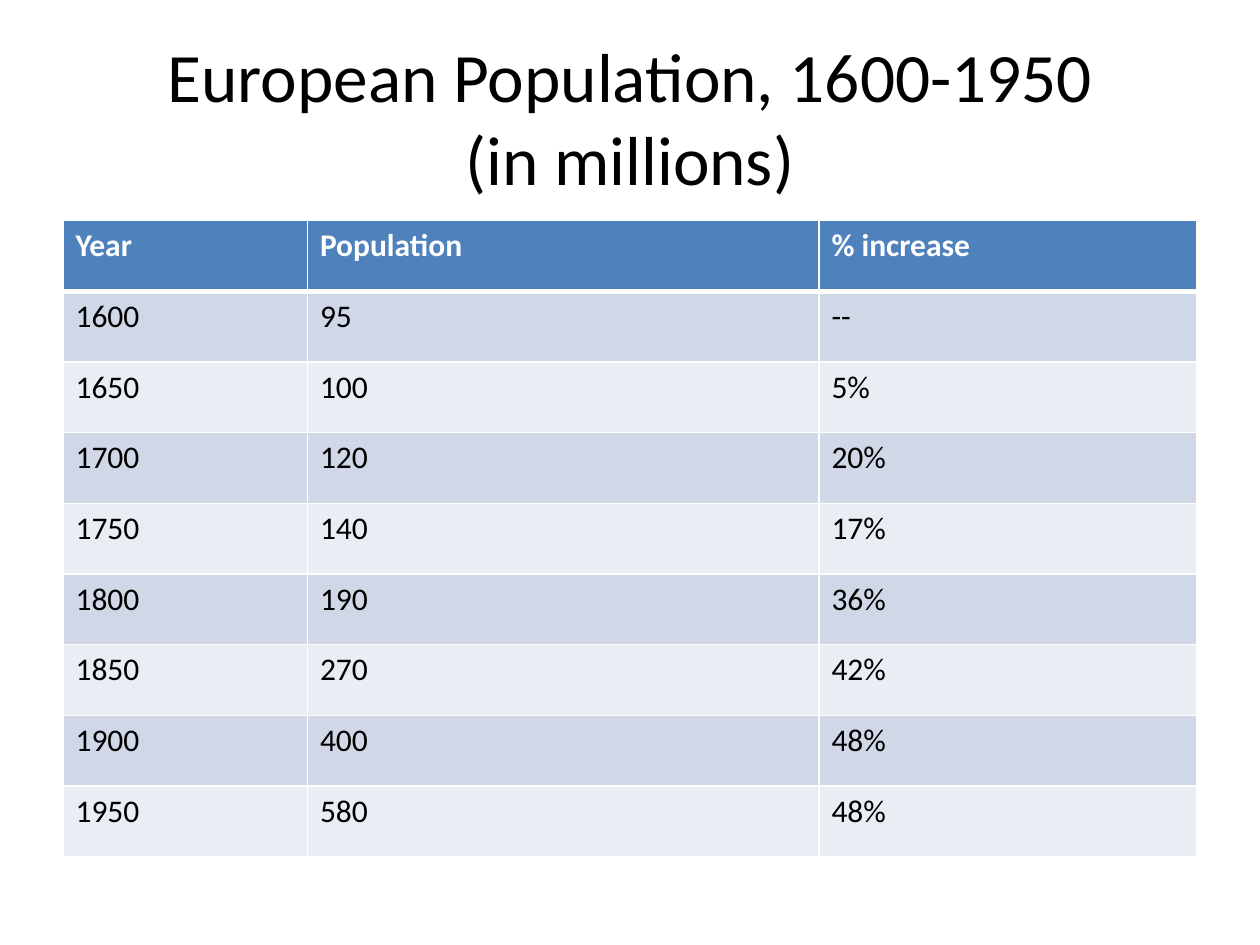
from lxml.etree import SubElement
from pptx import Presentation
from pptx.dml.color import RGBColor
from pptx.enum.text import MSO_ANCHOR, MSO_AUTO_SIZE, PP_ALIGN
from pptx.oxml.ns import qn
from pptx.util import Inches, Pt

WHITE = RGBColor(0xFF, 0xFF, 0xFF)
BLACK = RGBColor(0x00, 0x00, 0x00)
BLUE = RGBColor(0x4F, 0x81, 0xBD)
DARK = RGBColor(0xD0, 0xD8, 0xE8)
LIGHT = RGBColor(0xE9, 0xED, 0xF4)

TITLE = "European Population, 1600-1950\v(in millions)"
HEAD = ("Year", "Population", "% increase")
DATA = [
    ("1600", "95", "--"),
    ("1650", "100", "5%"),
    ("1700", "120", "20%"),
    ("1750", "140", "17%"),
    ("1800", "190", "36%"),
    ("1850", "270", "42%"),
    ("1900", "400", "48%"),
    ("1950", "580", "48%"),
]
WIDTHS = (1.94, 4.06, 3)
HEIGHT = 5.05


def style(item, values):
    for name, value in values.items():
        setattr(item, name, value)


def set_text(frame, text, size, color, bold=False):
    frame.text = text
    for run in frame.paragraphs[0].runs:
        style(run.font, {"name": "Calibri", "size": Pt(size), "bold": bold})
        run.font.color.rgb = color


def add_title(slide):
    title = slide.shapes.title
    style(title, {"left": Inches(0.5), "top": Inches(0.3),
                  "width": Inches(9), "height": Inches(1.25)})
    frame = title.text_frame
    style(frame, {"word_wrap": True, "auto_size": MSO_AUTO_SIZE.NONE,
                  "vertical_anchor": MSO_ANCHOR.MIDDLE})
    set_text(frame, TITLE, 39.6, BLACK)
    frame.paragraphs[0].alignment = PP_ALIGN.CENTER


def set_edges(cell, edges):
    props = cell._tc.get_or_add_tcPr()
    for tag, width in edges.items():
        line = SubElement(props, qn(f"a:{tag}"), w=str(Pt(width)))
        fill = SubElement(line, qn("a:solidFill"))
        SubElement(fill, qn("a:srgbClr"), val=str(WHITE))


def fill_cell(cell, text, row):
    header = row == 0
    # The rule under the header is heavier than the others
    set_edges(cell, {"lnL": 1, "lnR": 1,
                     "lnT": 3 if row == 1 else 1,
                     "lnB": 3 if header else 1})
    cell.fill.solid()
    cell.fill.fore_color.rgb = BLUE if header else DARK if row % 2 else LIGHT
    set_text(cell.text_frame, text, 18, WHITE if header else BLACK, header)


def add_grid(slide):
    rows = [HEAD, *DATA]
    table = slide.shapes.add_table(
        len(rows), len(HEAD), Inches(0.5), Inches(1.75),
        Inches(sum(WIDTHS)), Inches(HEIGHT)).table
    for column, width in zip(table.columns, WIDTHS):
        column.width = Inches(width)
    for row, texts in enumerate(rows):
        for col, text in enumerate(texts):
            fill_cell(table.cell(row, col), text, row)


def main():
    deck = Presentation()
    style(deck, {"slide_width": Inches(10), "slide_height": Inches(7.5)})
    slide = deck.slides.add_slide(deck.slide_layouts[5])
    # Heading above the population table
    add_title(slide)
    add_grid(slide)
    deck.save("out.pptx")


if __name__ == "__main__":
    main()
